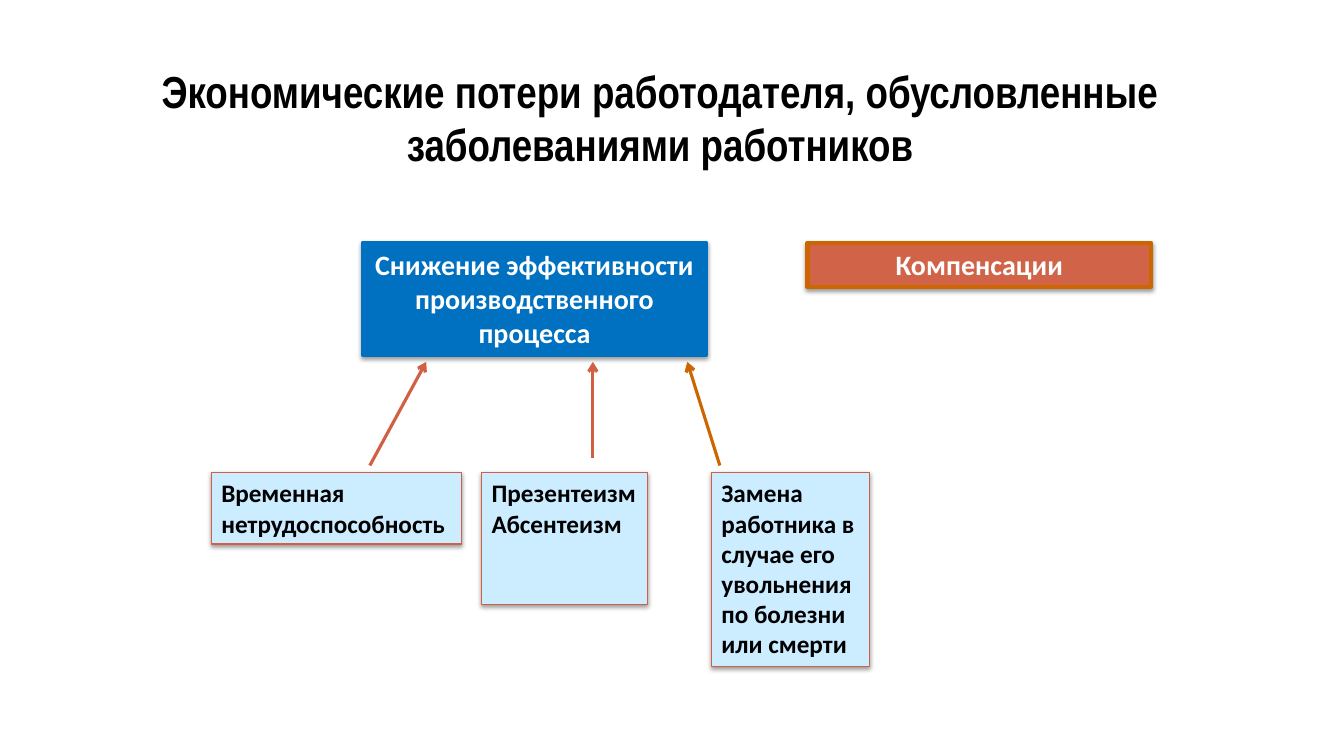
"""Build the slide on employers' economic losses caused by employee illness."""
import pptx
import pptx.util
import pptx.dml.color
import pptx.enum.shapes
import pptx.enum.text
import pptx.oxml
import pptx.oxml.ns

Cm, Pt = pptx.util.Cm, pptx.util.Pt
RGBColor = pptx.dml.color.RGBColor
ALIGN = pptx.enum.text.PP_ALIGN

BLACK = RGBColor(0x00, 0x00, 0x00)
WHITE = RGBColor(0xFF, 0xFF, 0xFF)
BLUE = RGBColor(0x00, 0x70, 0xC0)
PALE_BLUE = RGBColor(0xCC, 0xEC, 0xFF)
BRICK = RGBColor(0xD1, 0x63, 0x49)
DARK_BRICK = RGBColor(0xD0, 0x5F, 0x44)
ORANGE = RGBColor(0xCC, 0x66, 0x00)

TITLE = "Экономические потери работодателя, обусловленные заболеваниями работников"
LOSSES_TOP, LOSSES_WIDTH = 6.12, 8.66
LOSSES = [
    ("Снижение эффективности производственного процесса", 9.14, 2.82, BLUE, BLUE),
    ("Компенсации", 20.35, 1.12, BRICK, ORANGE),
]
CAUSES_TOP = 11.91
CAUSES = [
    ("Временная нетрудоспособность", 5.33, 6.3, 1.8),
    ("Презентеизм Абсентеизм", 12.14, 4.19, 3.33),
    ("Замена работника в случае его увольнения по болезни или смерти", 17.93, 3.99, 4.88),
]
ARROW_TIP = 9.12
ARROWS = [
    (9.32, 11.73, 10.74, DARK_BRICK),
    (14.94, 11.53, 14.94, DARK_BRICK),
    (18.14, 11.73, 17.32, ORANGE),
]
SHADOW = (
    '<a:outerShdw %s blurRad="40000" dist="20000" dir="5400000" rotWithShape="0">'
    '<a:srgbClr val="000000"><a:alpha val="38000"/></a:srgbClr></a:outerShdw>'
    % pptx.oxml.ns.nsdecls("a")
)


def write(shape, text, font, size, color, align):
    frame = shape.text_frame
    frame.text = text
    frame.word_wrap = True
    frame.auto_size = pptx.enum.text.MSO_AUTO_SIZE.NONE
    para = frame.paragraphs[0]
    para.alignment = align
    for span in para.runs:
        span.font.name = font
        span.font.size = Pt(size)
        span.font.bold = True
        span.font.color.rgb = color


def add_box(page, bounds, fill, outline, weight):
    box = page.shapes.add_textbox(*(Cm(length) for length in bounds))
    box.fill.solid()
    box.fill.fore_color.rgb = fill
    box.line.color.rgb = outline
    box.line.width = Pt(weight)
    box.shadow.inherit = False
    effects = box.element.spPr.find(pptx.oxml.ns.qn("a:effectLst"))
    effects.append(pptx.oxml.parse_xml(SHADOW))
    return box


def add_arrow(page, start_x, start_y, tip_x, color):
    arrow = page.shapes.add_connector(
        pptx.enum.shapes.MSO_CONNECTOR.STRAIGHT,
        Cm(start_x), Cm(start_y), Cm(tip_x), Cm(ARROW_TIP),
    )
    arrow.line.color.rgb = color
    arrow.line.width = Pt(2.25)
    namespace = pptx.oxml.ns.nsdecls("a")
    arrow.get_or_add_ln().append(
        pptx.oxml.parse_xml('<a:tailEnd %s type="arrow"/>' % namespace))
    arrow.element.spPr.append(
        pptx.oxml.parse_xml("<a:effectLst %s/>" % namespace))


def main():
    deck = pptx.Presentation()
    deck.slide_width, deck.slide_height = Cm(33.87), Cm(19.05)
    page = deck.slides.add_slide(deck.slide_layouts[5])

    title = page.shapes.title
    title.left, title.top, title.width, title.height = (
        Cm(0.74), Cm(0.79), Cm(31.8), Cm(4.32))
    title.fill.solid()
    title.fill.fore_color.rgb = WHITE
    write(title, TITLE, "Arial Narrow", 32, BLACK, ALIGN.CENTER)
    title.text_frame.vertical_anchor = pptx.enum.text.MSO_ANCHOR.MIDDLE

    for text, left, height, fill, outline in LOSSES:
        bounds = (left, LOSSES_TOP, LOSSES_WIDTH, height)
        box = add_box(page, bounds, fill, outline, 3)
        write(box, text, "Calibri", 20, WHITE, ALIGN.CENTER)

    for text, left, width, height in CAUSES:
        bounds = (left, CAUSES_TOP, width, height)
        box = add_box(page, bounds, PALE_BLUE, DARK_BRICK, 0.75)
        write(box, text, "Calibri", 18, BLACK, ALIGN.LEFT)

    for arrow in ARROWS:
        add_arrow(page, *arrow)

    deck.save("out.pptx")


if __name__ == "__main__":
    main()
